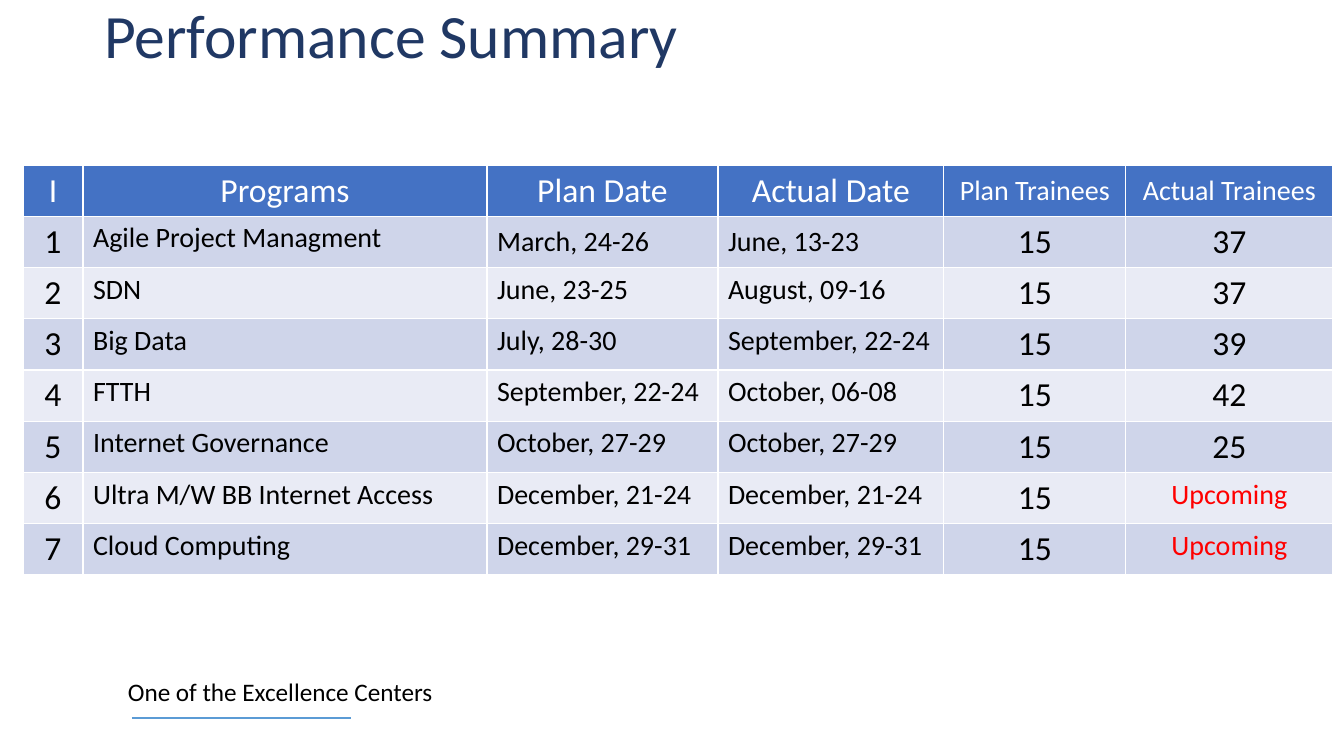
import pptx
import pptx.util
import pptx.dml.color
import pptx.enum.shapes
import pptx.enum.text
import pptx.oxml.ns
import lxml.etree

# Content
TITLE = "Performance Summary"
FOOTER = "One of the Excellence Centers"
HEADINGS = ("I", "Programs", "Plan Date", "Actual Date", "Plan Trainees", "Actual Trainees")
PROGRAMS = [
    ("1", "Agile Project Managment", "March, 24-26", "June, 13-23", "15", "37"),
    ("2", "SDN", "June, 23-25", "August, 09-16", "15", "37"),
    ("3", "Big Data", "July, 28-30", "September, 22-24", "15", "39"),
    ("4", "FTTH", "September, 22-24", "October, 06-08", "15", "42"),
    ("5", "Internet Governance", "October, 27-29", "October, 27-29", "15", "25"),
    ("6", "Ultra M/W BB Internet Access", "December, 21-24", "December, 21-24", "15", "Upcoming"),
    ("7", "Cloud Computing", "December, 29-31", "December, 29-31", "15", "Upcoming"),
]
UPCOMING = "Upcoming"
COLUMN_WIDTHS = (60, 404, 231, 226, 182, 207)
TABLE_LEFT, TABLE_TOP, TABLE_HEIGHT = 23, 165, 410

RGB = pptx.dml.color.RGBColor
NAVY = RGB(0x20, 0x38, 0x64)
BLUE = RGB(0x44, 0x72, 0xC4)
RULE_BLUE = RGB(0x5B, 0x9B, 0xD5)
BAND_DARK = RGB(0xCF, 0xD5, 0xEA)
BAND_LIGHT = RGB(0xE9, 0xEB, 0xF5)
WHITE = RGB(0xFF, 0xFF, 0xFF)
BLACK = RGB(0, 0, 0)
RED = RGB(0xFF, 0, 0)
ALIGN = pptx.enum.text.PP_ALIGN
ANCHOR = pptx.enum.text.MSO_ANCHOR


def px(length):
    return round(length * 914400 / 100.8)


def style(paragraph, size, color, align=ALIGN.LEFT):
    paragraph.alignment = align
    paragraph.font.name = "Calibri"
    paragraph.font.size = pptx.util.Pt(size)
    paragraph.font.color.rgb = color
    paragraph.font.bold = False


def cell_look(row, column, text):
    """Size, colour, alignment and anchor of one table cell."""
    if row == 0:
        return (20 if column >= 4 else 24), WHITE, ALIGN.CENTER, ANCHOR.MIDDLE
    anchor = ANCHOR.MIDDLE if column == 0 or (row == 1 and column > 1) else ANCHOR.TOP
    if text == UPCOMING:
        return 20, RED, ALIGN.CENTER, anchor
    if column in (1, 2, 3):
        return 20, BLACK, ALIGN.LEFT, anchor
    return 24, BLACK, ALIGN.CENTER, anchor


def main():
    deck = pptx.Presentation()
    deck.slide_width, deck.slide_height = px(1344), px(756)
    slide = deck.slides.add_slide(deck.slide_layouts[5])

    # Title
    title = slide.shapes.title
    title.left, title.top, title.width, title.height = px(94), px(0), px(1159), px(146)
    title.text_frame.text = TITLE
    title.text_frame.vertical_anchor = ANCHOR.TOP
    title.text_frame.auto_size = pptx.enum.text.MSO_AUTO_SIZE.NONE
    title.text_frame.paragraphs[0].line_spacing = 0.9
    style(title.text_frame.paragraphs[0], 44, NAVY)

    # Footer with its rule
    rule = slide.shapes.add_connector(
        pptx.enum.shapes.MSO_CONNECTOR.STRAIGHT, px(132), px(718), px(351), px(718))
    rule.line.color.rgb = RULE_BLUE
    rule.line.width = pptx.util.Pt(1.5)
    lxml.etree.SubElement(rule._element.spPr, pptx.oxml.ns.qn("a:effectLst"))

    footer = slide.shapes.add_textbox(px(118), px(671), px(329), px(40))
    footer.text_frame.word_wrap = False
    footer.text_frame.text = FOOTER
    style(footer.text_frame.paragraphs[0], 18, BLACK)

    # Programs table
    rows = [HEADINGS] + PROGRAMS
    programs = slide.shapes.add_table(
        len(rows), len(HEADINGS), px(TABLE_LEFT), px(TABLE_TOP),
        px(sum(COLUMN_WIDTHS)), px(TABLE_HEIGHT)).table
    for column, width in zip(programs.columns, COLUMN_WIDTHS):
        column.width = px(width)
    for r, row in enumerate(rows):
        band = BLUE if r == 0 else BAND_DARK if r % 2 else BAND_LIGHT
        for c, text in enumerate(row):
            cell = programs.cell(r, c)
            size, color, align, anchor = cell_look(r, c, text)
            cell.text = text
            cell.vertical_anchor = anchor
            cell.fill.solid()
            cell.fill.fore_color.rgb = band
            style(cell.text_frame.paragraphs[0], size, color, align)

    deck.save("out.pptx")


if __name__ == "__main__":
    main()
